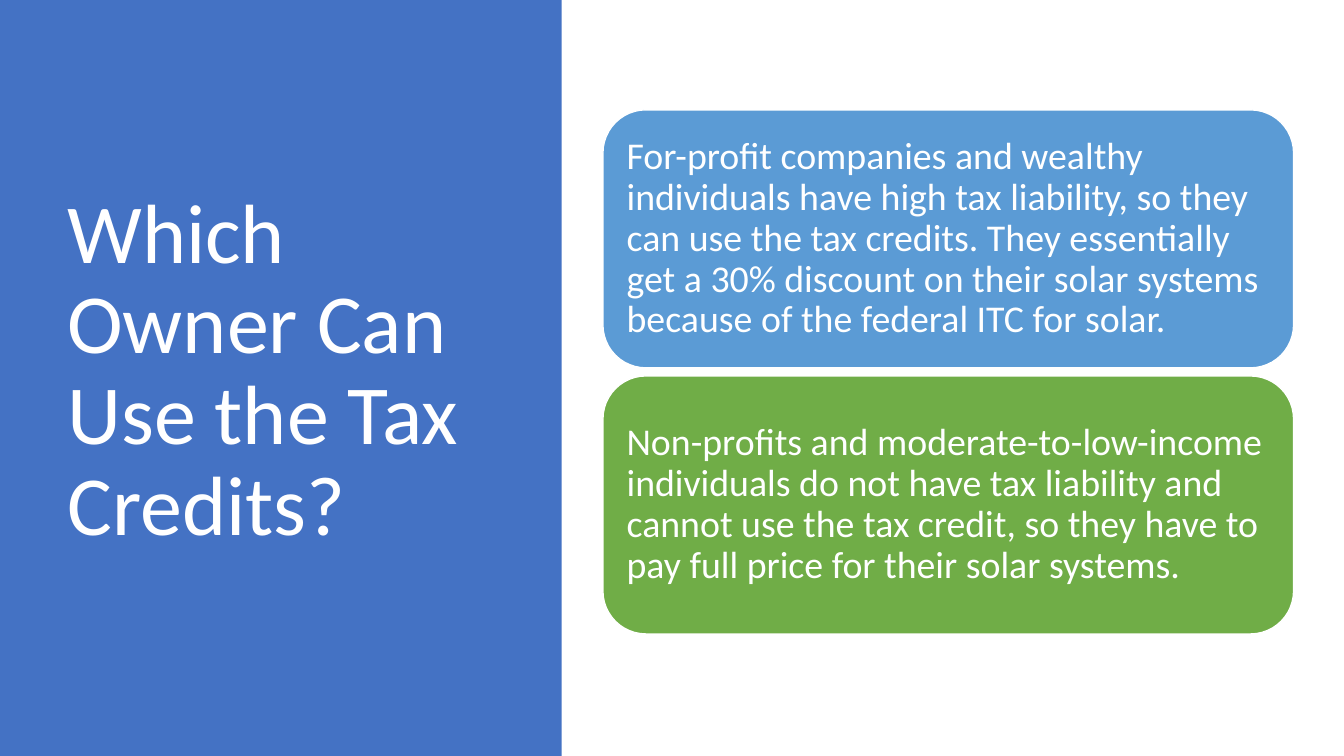
"""Build a slide on which solar owners can use the tax credits."""
from dataclasses import dataclass

from pptx import Presentation
from pptx import util as u
from pptx.dml.color import RGBColor
from pptx.enum import shapes, text

TITLE = "Which Owner Can Use the Tax Credits?"
CARDS = [
    ("For-profit companies and wealthy individuals have high tax liability, "
     "so they can use the tax credits. They essentially get a 30% discount on "
     "their solar systems because of the federal ITC for solar.", "5B9BD5"),
    ("Non-profits and moderate-to-low-income individuals do not have tax "
     "liability and cannot use the tax credit, so they have to pay full price "
     "for their solar systems.", "70AD47"),
]


@dataclass(frozen=True)
class Theme:
    font: str = "Calibri"
    panel: str = "4472C4"
    white: str = "FFFFFF"
    title_size: int = 60
    card_size: int = 27


THEME = Theme()
SLIDE_WIDTH, SLIDE_HEIGHT = 13.33, 7.5
PANEL_WIDTH = 5.57
TITLE_BOX = (0.57, 0.68, 4.16, 6.02)
CARD_LEFT, CARD_TOP, CARD_WIDTH, CARD_HEIGHT = 5.98, 1.09, 6.85, 2.56
CARD_GAP = 0.08
CARD_INSET = 0.11


def add_block(page, kind, bounds, fill):
    block = page.shapes.add_shape(kind, *map(u.Inches, bounds))
    block.shadow.inherit = False
    block.fill.solid()
    block.fill.fore_color.rgb = RGBColor.from_string(fill)
    block.line.fill.background()
    return block


def write(box, words, size, inset_x, inset_y):
    frame = box.text_frame
    frame.word_wrap = True
    frame.vertical_anchor = text.MSO_ANCHOR.MIDDLE
    frame.margin_left = frame.margin_right = u.Inches(inset_x)
    frame.margin_top = frame.margin_bottom = u.Inches(inset_y)
    para = frame.paragraphs[0]
    para.text = words
    para.alignment = text.PP_ALIGN.LEFT
    para.line_spacing = 0.9
    para.font.name = THEME.font
    para.font.size = u.Pt(size)
    para.font.color.rgb = RGBColor.from_string(THEME.white)


def main():
    deck = Presentation()
    deck.slide_width = u.Inches(SLIDE_WIDTH)
    deck.slide_height = u.Inches(SLIDE_HEIGHT)
    page = deck.slides.add_slide(deck.slide_layouts[6])

    add_block(page, shapes.MSO_SHAPE.RECTANGLE,
              (0, 0, PANEL_WIDTH, SLIDE_HEIGHT), THEME.panel)
    title = page.shapes.add_textbox(*map(u.Inches, TITLE_BOX))
    write(title, TITLE, THEME.title_size, 0.1, 0.05)

    for index, (words, fill) in enumerate(CARDS):
        top = CARD_TOP + index * (CARD_HEIGHT + CARD_GAP)
        card = add_block(page, shapes.MSO_SHAPE.ROUNDED_RECTANGLE,
                         (CARD_LEFT, top, CARD_WIDTH, CARD_HEIGHT), fill)
        card.line.color.rgb = RGBColor.from_string(THEME.white)
        card.line.width = u.Pt(1)
        write(card, words, THEME.card_size, CARD_INSET, CARD_INSET)

    deck.save("out.pptx")


if __name__ == "__main__":
    main()
